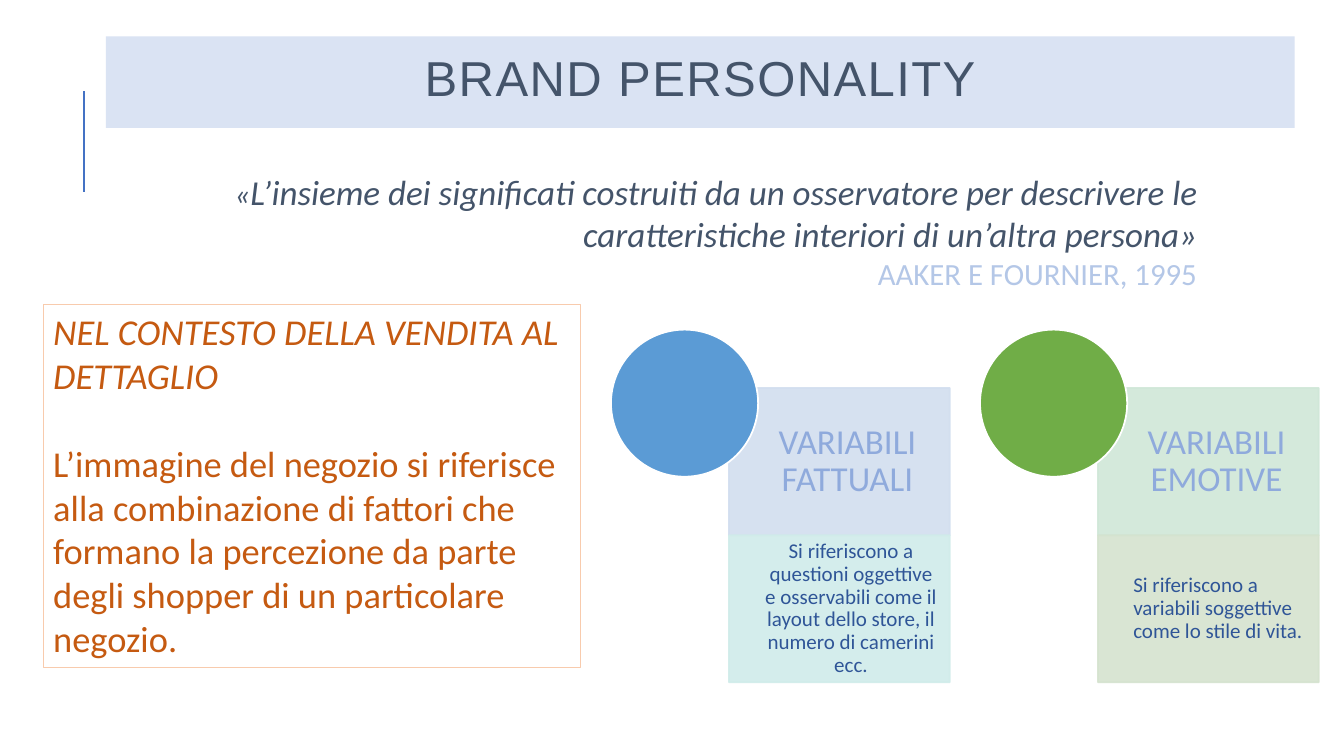
from dataclasses import dataclass

from lxml import etree
from pptx import Presentation
from pptx.dml.color import RGBColor
from pptx.enum.shapes import MSO_CONNECTOR, MSO_SHAPE
from pptx.enum.text import MSO_ANCHOR, PP_ALIGN
from pptx.oxml.ns import qn
from pptx.util import Inches, Pt

RECT, OVAL = MSO_SHAPE.RECTANGLE, MSO_SHAPE.OVAL
STRAIGHT = MSO_CONNECTOR.STRAIGHT
TOP, MIDDLE = MSO_ANCHOR.TOP, MSO_ANCHOR.MIDDLE
LEFT, CENTER, RIGHT = PP_ALIGN.LEFT, PP_ALIGN.CENTER, PP_ALIGN.RIGHT


@dataclass(frozen=True)
class Theme:
    """Fonts, colours and type sizes of the slide."""
    head_font: str = "Arial"
    body_font: str = "Calibri"
    ink: str = "44546A"
    rule: str = "4472C4"
    band: str = "DAE3F3"
    source: str = "B4C7E7"
    white: str = "FFFFFF"
    accent: str = "C55A11"
    accent_line: str = "F8CBAD"
    label: str = "8FAADC"
    detail: str = "2F5597"
    title_size: float = 35
    quote_size: float = 25
    source_size: float = 22
    context_size: float = 26
    label_size: float = 25
    detail_size: float = 15


THEME = Theme()
CARDS = [
    ("5B9BD5", "D2DEEF", "VARIABILI FATTUALI", "D0ECEA", CENTER,
     "Si riferiscono a questioni oggettive e osservabili come il layout "
     "dello store, il numero di camerini ecc."),
    ("70AD47", "D0E7D8", "VARIABILI EMOTIVE", "D5E3CF", LEFT,
     "Si riferiscono a variabili soggettive come lo stile di vita."),
]


def add_box(slide, box, fill, line=None, width=1.25, kind=RECT, alpha=None):
    """Add a filled shape, with alpha in percent for fill and line."""
    sp = slide.shapes.add_shape(kind, *map(Inches, box))
    sp.shadow.inherit = False
    sp.fill.solid()
    sp.fill.fore_color.rgb = RGBColor.from_string(fill)
    if line:
        sp.line.color.rgb = RGBColor.from_string(line)
        sp.line.width = Pt(width)
    else:
        sp.line.fill.background()
    if alpha:
        for clr in sp.element.spPr.iter(qn("a:srgbClr")):
            etree.SubElement(clr, qn("a:alpha"), val=str(alpha * 1000))
    return sp


def set_frame(sp, anchor=TOP, insets=(0.1, 0.05, 0.1, 0.05)):
    """Set wrapping, anchor and insets, and return the text frame."""
    tf = sp.text_frame
    tf.word_wrap = True
    tf.vertical_anchor = anchor
    (tf.margin_left, tf.margin_top,
     tf.margin_right, tf.margin_bottom) = map(Inches, insets)
    return tf


def add_run(p, text, size, color, font=THEME.body_font, italic=False):
    """Append one formatted run to a paragraph."""
    r = p.add_run()
    r.text = text
    r.font.size, r.font.name, r.font.italic = Pt(size), font, italic
    r.font.color.rgb = RGBColor.from_string(color)
    return r


def add_title(slide, box):
    """Place the title band and the upright rule to its left."""
    x, y = box[:2]
    rule = slide.shapes.add_connector(
        STRAIGHT, *map(Inches, (x - 0.22, y + 1.54, x - 0.22, y + 0.54)))
    rule.line.color.rgb = RGBColor.from_string(THEME.rule)
    rule.line.width = Pt(1.5)
    etree.SubElement(rule.element.spPr, qn("a:effectLst"))
    p = set_frame(add_box(slide, box, THEME.band), MIDDLE).paragraphs[0]
    p.alignment, p.line_spacing = CENTER, 0.8
    r = add_run(p, "BRAND PERSONALITY", THEME.title_size, THEME.ink,
                THEME.head_font)
    r.font.element.set("spc", "100") if hasattr(r.font, "element") else \
        r.font._element.set("spc", "100") if hasattr(r.font, "_element") else \
        r._r.get_or_add_rPr().set("spc", "100")


def add_quote(slide, box):
    """Place the quotation and its source, aligned right."""
    tf = set_frame(slide.shapes.add_textbox(*map(Inches, box)))
    p = tf.paragraphs[0]
    p.alignment = RIGHT
    add_run(p, "«", THEME.source_size, THEME.ink, italic=True)
    add_run(p, "L’insieme dei significati costruiti da un osservatore per "
            "descrivere le caratteristiche interiori di un’altra persona»",
            THEME.quote_size, THEME.ink, italic=True)
    p = tf.add_paragraph()
    p.alignment = RIGHT
    add_run(p, "AAKER E FOURNIER, 1995", THEME.source_size, THEME.source)


def add_context(slide, box):
    """Place the framed text on the retail context."""
    tf = set_frame(add_box(slide, box, THEME.white, THEME.accent_line, 0.75))
    p = tf.paragraphs[0]
    p.alignment = LEFT
    add_run(p, "NEL CONTESTO DELLA VENDITA AL DETTAGLIO",
            THEME.context_size, THEME.accent, italic=True)
    p = tf.add_paragraph()
    p.alignment = LEFT
    p.space_before = Pt(THEME.context_size * 1.22)
    add_run(p, "L’immagine del negozio si riferisce alla combinazione di "
            "fattori che formano la percezione da parte degli shopper di un "
            "particolare negozio.", THEME.context_size, THEME.accent)


def add_card(slide, box, card):
    """Place a label over a detail, with a disc at the upper left."""
    x, y, w, h = box
    disc, label_fill, label, detail_fill, align, detail = card
    side = 1.46
    left, top = x + 1.17, y + h - 2 * side
    rows = [
        (label_fill, label, THEME.label_size, THEME.label, CENTER, 0.19),
        (detail_fill, detail, THEME.detail_size, THEME.detail, align, 0.12),
    ]
    for i, (fill, text, size, color, al, pad) in enumerate(rows):
        cell = (left, top + i * side, x + w - left, side)
        sp = add_box(slide, cell, fill, fill, alpha=90)
        p = set_frame(sp, MIDDLE, (0.35, pad, pad, pad)).paragraphs[0]
        p.alignment, p.line_spacing = al, 0.9
        add_run(p, text, size, color)
    add_box(slide, (x, y, side, side), disc, THEME.white, kind=OVAL)


def main():
    """Build the slide and save it."""
    prs = Presentation()
    prs.slide_width, prs.slide_height = Inches(13.33), Inches(7.5)
    slide = prs.slides.add_slide(prs.slide_layouts[6])
    add_title(slide, (1.05, 0.36, 11.79, 0.91))
    add_quote(slide, (1.37, 1.64, 10.6, 1.32))
    for i, card in enumerate(CARDS):
        add_card(slide, (6.06 + i * 3.66, 3.27, 3.36, 3.5), card)
    add_context(slide, (0.43, 3.02, 5.33, 3.6))
    prs.save("out.pptx")


if __name__ == "__main__":
    main()
